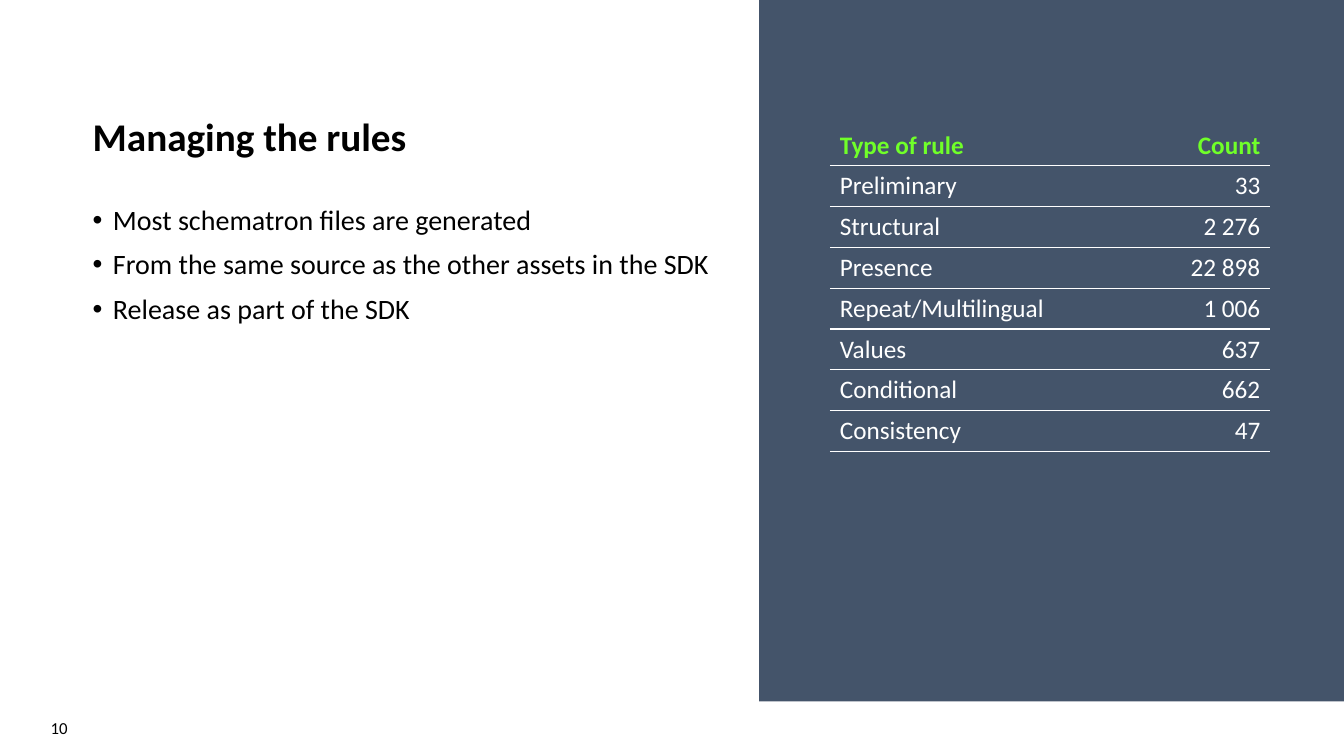
from lxml.etree import SubElement
from pptx import Presentation
from pptx.dml.color import RGBColor
from pptx.enum.shapes import MSO_SHAPE
from pptx.enum.text import MSO_ANCHOR, PP_ALIGN
from pptx.oxml import parse_xml
from pptx.oxml.ns import nsdecls, qn
from pptx.util import Inches, Pt

BLACK = RGBColor(0x00, 0x00, 0x00)
WHITE = RGBColor(0xFF, 0xFF, 0xFF)
SLATE = RGBColor(0x44, 0x54, 0x6A)
GREEN = RGBColor(0x70, 0xFF, 0x29)
FONT = "Calibri"
NO_GRID_STYLE = "{2D5ABB26-0587-4C30-8999-92F81FD0307C}"

BULLETS = [
    "Most schematron files are generated",
    "From the same source as the other assets in the SDK",
    "Release as part of the SDK",
]
RULE_COUNTS = [
    ("Type of rule", "Count"),
    ("Preliminary", "33"),
    ("Structural", "2 276"),
    ("Presence", "22 898"),
    ("Repeat/Multilingual", "1 006"),
    ("Values", "637"),
    ("Conditional", "662"),
    ("Consistency", "47"),
]


def set_font(paragraph, size, color, bold=False):
    """Apply the slide's typeface to a paragraph."""
    font = paragraph.font
    font.name, font.size, font.bold = FONT, Pt(size), bold
    font.color.rgb = color


def add_panel(slide, left, top, width, height):
    """Add the plain dark panel behind the table."""
    panel = slide.shapes.add_shape(
        MSO_SHAPE.RECTANGLE, Inches(left), Inches(top), Inches(width), Inches(height))
    panel.shadow.inherit = False
    panel.fill.solid()
    panel.fill.fore_color.rgb = SLATE
    panel.line.fill.background()


def add_text(slide, left, top, width, height, text, anchor=MSO_ANCHOR.TOP, inset=0.1):
    """Add a wrapping text box and return its text frame."""
    box = slide.shapes.add_textbox(
        Inches(left), Inches(top), Inches(width), Inches(height))
    frame = box.text_frame
    frame.word_wrap = True
    frame.vertical_anchor = anchor
    frame.margin_left = Inches(inset)
    frame.text = text
    return frame


def add_bullets(slide, left, top, width, height, items):
    """Add a bulleted list with hanging indents."""
    frame = add_text(slide, left, top, width, height, "\n".join(items), inset=0)
    for index, paragraph in enumerate(frame.paragraphs):
        paragraph.line_spacing = 0.9
        paragraph.space_before = Pt(10 if index else 0)
        properties = paragraph._p.get_or_add_pPr()
        properties.set("marL", str(Inches(0.2)))
        properties.set("indent", str(Inches(-0.2)))
        SubElement(properties, qn("a:buFont"), typeface="Arial")
        SubElement(properties, qn("a:buChar"), char="•")
        set_font(paragraph, 20, BLACK)


def underline_cell(cell):
    """Draw a thin white line under a table cell."""
    border = parse_xml(
        f'<a:lnB {nsdecls("a")} w="{Pt(1)}"><a:solidFill>'
        f'<a:srgbClr val="{WHITE}"/></a:solidFill></a:lnB>')
    cell._tc.get_or_add_tcPr().insert(0, border)


def add_rule_table(slide, left, top, column_widths, height, rows):
    """Add the underlined table with a highlighted header row."""
    frame = slide.shapes.add_table(
        len(rows), len(column_widths), Inches(left), Inches(top),
        Inches(sum(column_widths)), Inches(height))
    table = frame.table
    table.horz_banding = False
    table._tbl.tblPr.find(qn("a:tableStyleId")).text = NO_GRID_STYLE
    for column, width in zip(table.columns, column_widths):
        column.width = Inches(width)
    for row_index, values in enumerate(rows):
        header = row_index == 0
        for column_index, value in enumerate(values):
            cell = table.cell(row_index, column_index)
            cell.fill.background()
            underline_cell(cell)
            cell.text = value
            paragraph = cell.text_frame.paragraphs[0]
            paragraph.alignment = PP_ALIGN.RIGHT if column_index else PP_ALIGN.LEFT
            set_font(paragraph, 18, GREEN if header else WHITE, header)


def main():
    """Build and save the slide."""
    presentation = Presentation()
    presentation.slide_width = Inches(13.33)
    presentation.slide_height = Inches(7.5)
    slide = presentation.slides.add_slide(presentation.slide_layouts[6])

    add_panel(slide, 7.53, 0, 5.8, 6.96)
    title = add_text(slide, 0.92, 0.14, 6.44, 1.45, "Managing the rules",
                     MSO_ANCHOR.BOTTOM, inset=0)
    title.margin_bottom = 0
    title.paragraphs[0].line_spacing = 0.9
    set_font(title.paragraphs[0], 28, BLACK, True)
    add_bullets(slide, 0.92, 2, 6.44, 4.76, BULLETS)
    add_rule_table(slide, 8.23, 1.24, (2.7, 1.67), 3.24, RULE_COUNTS)
    number = add_text(slide, 0, 7.02, 0.77, 0.4, "10", MSO_ANCHOR.MIDDLE)
    number.paragraphs[0].alignment = PP_ALIGN.RIGHT
    set_font(number.paragraphs[0], 12, BLACK)

    presentation.save("out.pptx")


if __name__ == "__main__":
    main()
